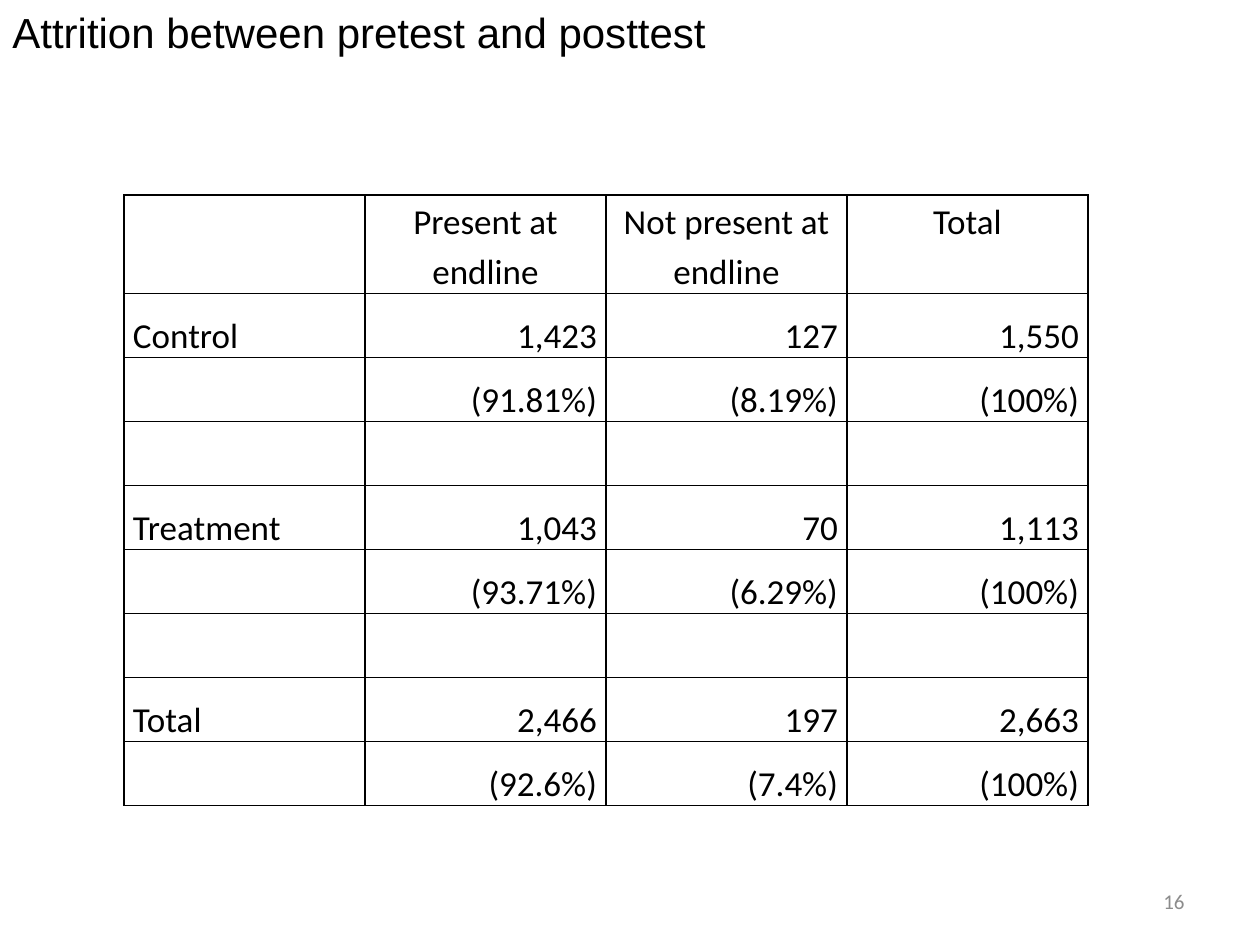
from lxml.etree import SubElement as Sub
from pptx import Presentation
from pptx.dml.color import RGBColor
from pptx.enum.text import MSO_ANCHOR as Anchor, MSO_AUTO_SIZE as Auto, PP_ALIGN as Align
from pptx.oxml.ns import qn
from pptx.util import Pt

# Content
TITLE = "Attrition between pretest and posttest"
PAGE = "16"
ROWS = [
    ("", "Present at endline", "Not present at endline", "Total"),
    ("Control", "1,423", "127", "1,550"),
    ("", "(91.81%)", "(8.19%)", "(100%)"),
    ("", "", "", ""),
    ("Treatment", "1,043", "70", "1,113"),
    ("", "(93.71%)", "(6.29%)", "(100%)"),
    ("", "", "", ""),
    ("Total", "2,466", "197", "2,663"),
    ("", "(92.6%)", "(7.4%)", "(100%)"),
]

# Sizes in px, 126 to the inch
LEFT, TOP = 124, 195
COL, HEAD, ROW, PAD = 241, 97, 64, 9
BLACK, GREY = "000000", "8C8C8C"


def px(n):
    return round(n * 914400 / 126)


def color(code):
    return RGBColor.from_string(code)


def put(obj, form):
    for key, val in form.items():
        setattr(obj, key, val)


def write(para, text, size, font, code, align):
    para.alignment = align
    run = para.add_run()
    run.text = text
    put(run.font, {"size": Pt(size), "name": font})
    run.font.color.rgb = color(code)


def label(slide, area, text, style, form):
    box = slide.shapes.add_textbox(*map(px, area))
    put(box.text_frame, {"vertical_anchor": Anchor.MIDDLE, **form})
    write(box.text_frame.paragraphs[0], text, *style)


def border(cell):
    props = cell._tc.get_or_add_tcPr()
    for n, side in enumerate(("lnL", "lnR", "lnT", "lnB")):
        line = Sub(props, qn("a:" + side), w=str(Pt(1)))
        fill = Sub(line, qn("a:solidFill"))
        Sub(fill, qn("a:srgbClr"), val=BLACK)
        props.remove(line)
        props.insert(n, line)


deck = Presentation()
put(deck, {"slide_width": px(1260), "slide_height": px(945)})
slide = deck.slides.add_slide(deck.slide_layouts[6])

# Attrition table
high = HEAD + ROW * (len(ROWS) - 1)
area = (LEFT, TOP, COL * len(ROWS[0]), high)
table = slide.shapes.add_table(len(ROWS), len(ROWS[0]), *map(px, area)).table
put(table, {"first_row": False, "horz_banding": False})
for col in table.columns:
    col.width = px(COL)
for r, row in enumerate(ROWS):
    table.rows[r].height = px(ROW if r else HEAD)
    for c, text in enumerate(row):
        cell = table.cell(r, c)
        cell.fill.background()
        border(cell)
        if not text:
            continue
        put(cell, {
            "margin_left": px(PAD), "margin_right": px(PAD),
            "margin_top": 0, "margin_bottom": 0,
            "vertical_anchor": Anchor.BOTTOM if r else Anchor.TOP,
        })
        para = cell.text_frame.paragraphs[0]
        para.line_spacing = 1.15
        align = Align.CENTER if r == 0 else Align.RIGHT if c else Align.LEFT
        write(para, text, 20, "Calibri", BLACK, align)

# Title and page number
label(slide, (0, 0, 748, 63), TITLE, (24, "Arial", BLACK, Align.LEFT),
      {"word_wrap": False, "auto_size": Auto.SHAPE_TO_FIT_TEXT})
label(slide, (903, 876, 294, 50), PAGE, (12, "Calibri", GREY, Align.RIGHT),
      {"word_wrap": True})

deck.save("out.pptx")
